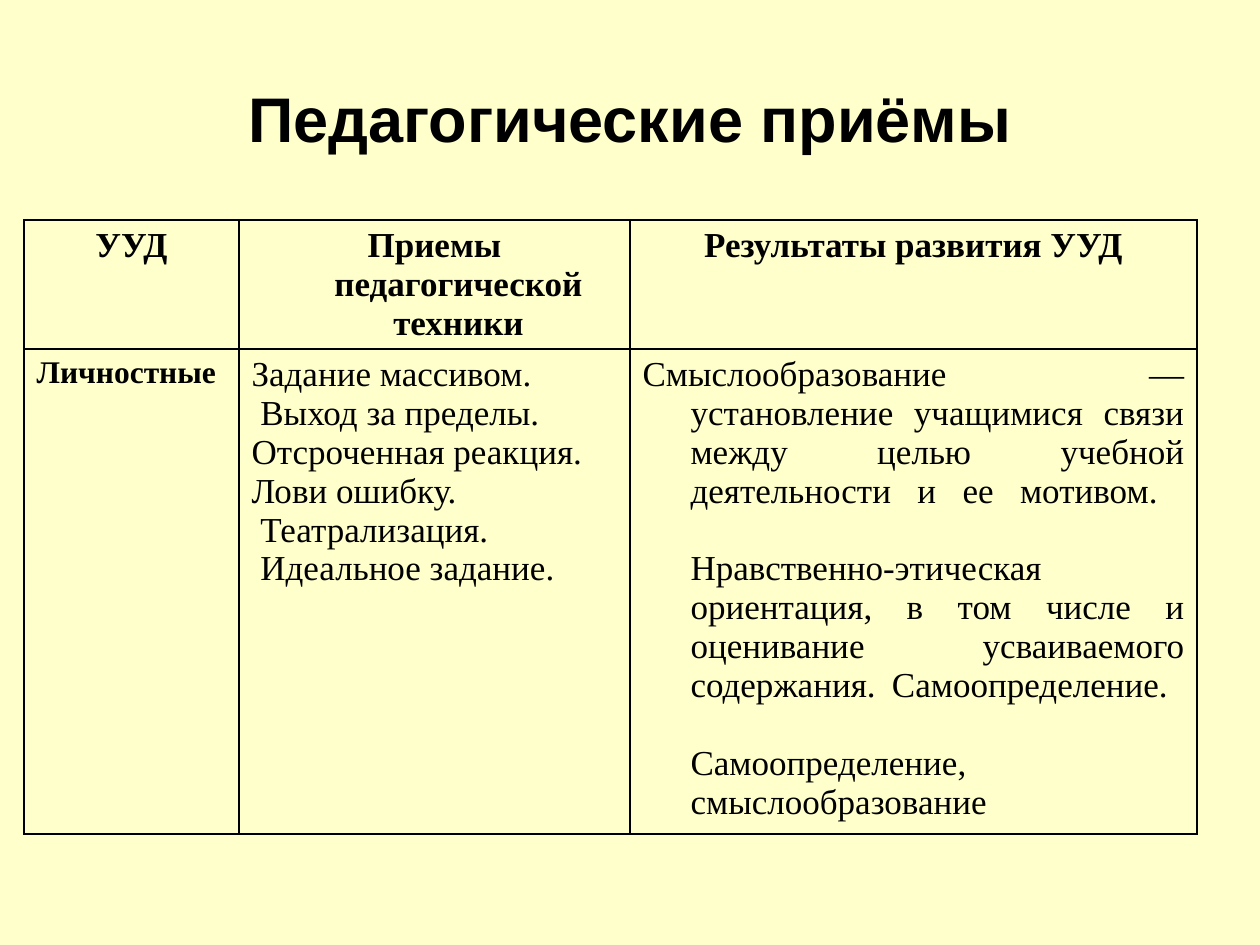
from lxml import etree
from pptx import Presentation
from pptx.dml.color import RGBColor
from pptx.enum.text import MSO_ANCHOR, PP_ALIGN
from pptx.oxml.ns import qn
from pptx.util import Pt

CENTER, JUSTIFY = PP_ALIGN.CENTER, PP_ALIGN.JUSTIFY
MIDDLE = MSO_ANCHOR.MIDDLE
BLACK = RGBColor(0, 0, 0)
CREAM = RGBColor(255, 255, 204)
PX = 914400 // 126

TITLE = "Педагогические приёмы"
HEADS = ["УУД", "Приемы педагогической техники", "Результаты развития УУД"]
METHODS = [
    "Задание массивом.",
    " Выход за пределы.",
    "Отсроченная реакция.",
    "Лови ошибку.",
    " Театрализация.",
    " Идеальное задание.",
]
RESULTS = (
    "Смыслообразование — установление учащимися связи между целью "
    "учебной деятельности и ее мотивом. \v\v"
    "Нравственно-этическая ориентация, в том числе и оценивание "
    "усваиваемого содержания. Самоопределение. \v\v"
    "Самоопределение, смыслообразование"
)
ROWS = [
    [([head], 20, True, CENTER) for head in HEADS],
    [
        (["Личностные"], 18, True, JUSTIFY),
        (METHODS, 20, False, JUSTIFY),
        ([RESULTS], 20, False, JUSTIFY),
    ],
]
LEFT, TOP = 24, 220
WIDTHS = [215, 391, 567]
HEIGHTS = [129, 485]
INDENT = 48


def style(para, face, size, bold, align):
    para.alignment = align
    font = para.font
    font.name, font.size, font.bold = face, Pt(size), bold
    font.color.rgb = BLACK


def border(cell):
    props = cell._tc.get_or_add_tcPr()
    for spot, side in enumerate(("lnL", "lnR", "lnT", "lnB")):
        line = etree.Element(qn("a:" + side), w=str(Pt(1)))
        fill = etree.SubElement(line, qn("a:solidFill"))
        etree.SubElement(fill, qn("a:srgbClr"), val=str(BLACK))
        props.insert(spot, line)


def write(cell, lines, size, bold, align):
    cell.fill.background()
    border(cell)
    frame = cell.text_frame
    for num, line in enumerate(lines):
        para = frame.add_paragraph() if num else frame.paragraphs[0]
        para.text = line
        style(para, "Times New Roman", size, bold, align)
        props = para._p.get_or_add_pPr()
        props.set("marL", str(INDENT * PX))
        props.set("indent", str(-INDENT * PX))


deck = Presentation()
deck.slide_width, deck.slide_height = 1260 * PX, 945 * PX
slide = deck.slides.add_slide(deck.slide_layouts[5])
back = slide.background.fill
back.solid()
back.fore_color.rgb = CREAM

title = slide.shapes.title
title.left, title.top, title.width, title.height = [
    n * PX for n in (63, 38, 1134, 158)
]
title.text_frame.text = TITLE
title.text_frame.vertical_anchor = MIDDLE
style(title.text_frame.paragraphs[0], "Arial", 36, True, CENTER)

table = slide.shapes.add_table(
    len(ROWS), len(WIDTHS), LEFT * PX, TOP * PX,
    sum(WIDTHS) * PX, sum(HEIGHTS) * PX,
).table
for col, width in zip(table.columns, WIDTHS):
    col.width = width * PX
for row, height, cells in zip(table.rows, HEIGHTS, ROWS):
    row.height = height * PX
    for cell, content in zip(row.cells, cells):
        write(cell, *content)

deck.save("out.pptx")
